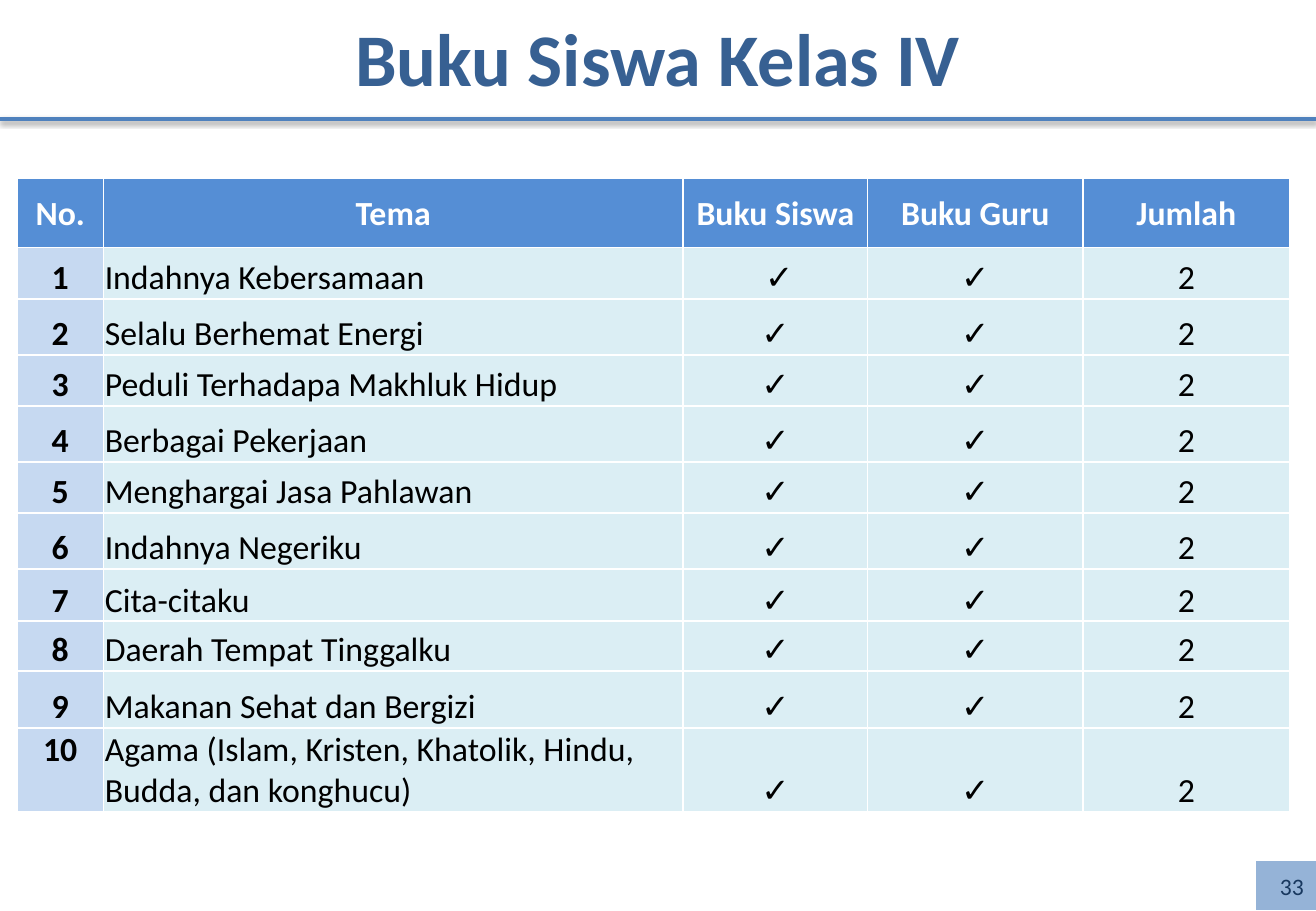
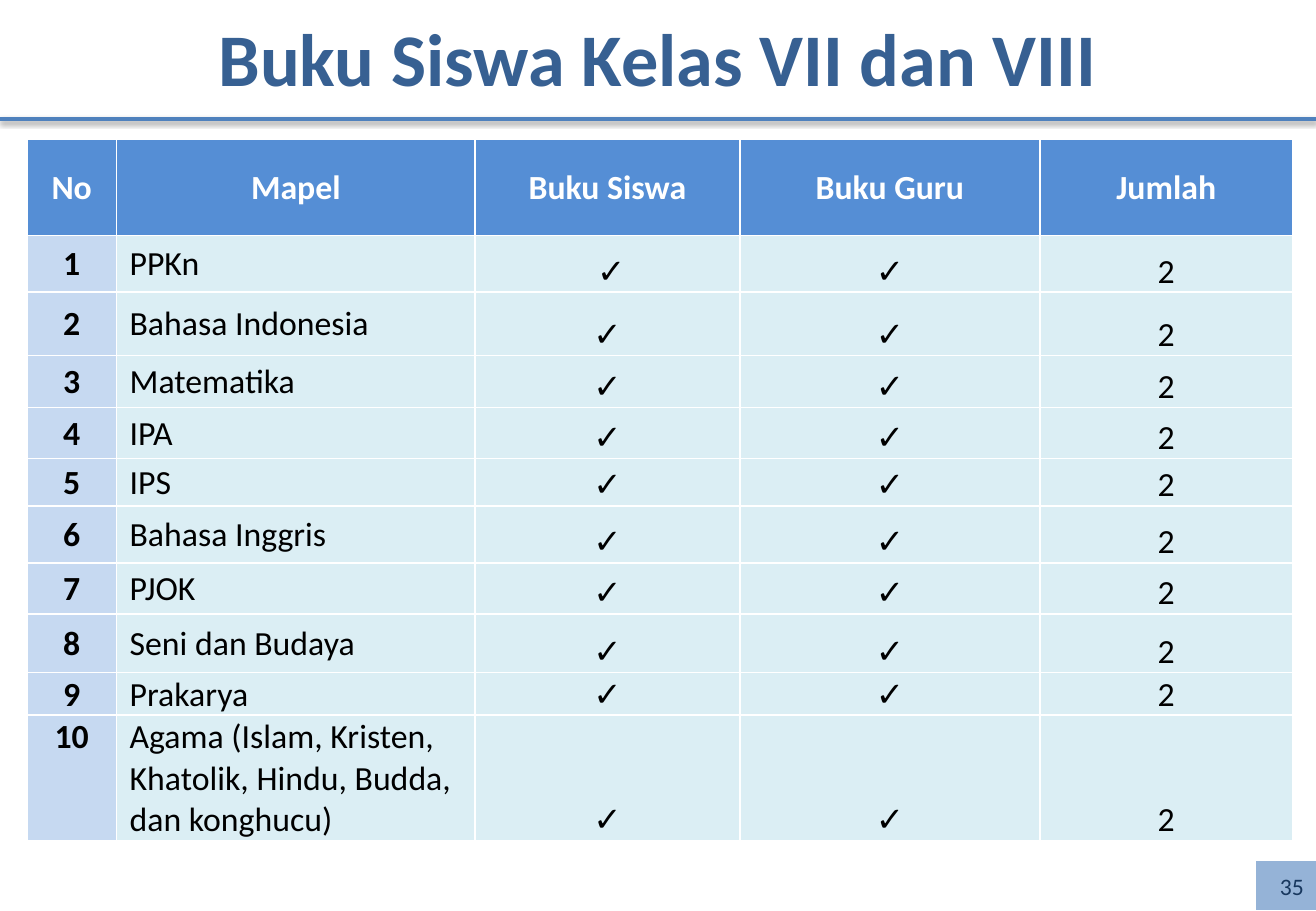
from dataclasses import dataclass

from lxml import etree
from pptx import Presentation
from pptx.dml.color import RGBColor
from pptx.enum import shapes, text
from pptx.oxml import parse_xml
from pptx.oxml.ns import nsdecls
from pptx.util import Cm, Pt

FONT = "Calibri"
WHITE = RGBColor(0xFF, 0xFF, 0xFF)
BLACK = RGBColor(0x00, 0x00, 0x00)
TITLE_BLUE = RGBColor(0x37, 0x60, 0x92)
RULE_BLUE = RGBColor(0x4F, 0x81, 0xBD)
PAGE_FILL = RGBColor(0x95, 0xB3, 0xD7)
PAGE_TEXT = RGBColor(0x17, 0x37, 0x5E)
HEADER_FILL = RGBColor(0x55, 0x8E, 0xD5)
NUMBER_FILL = RGBColor(0xC6, 0xD9, 0xF1)
BODY_FILL = RGBColor(0xDB, 0xEE, 0xF4)

SLIDE_WIDTH, SLIDE_HEIGHT = Cm(27.51), Cm(19.05)
TITLE_HEIGHT, RULE_TOP = Cm(2.36), Cm(2.49)
THIN_INSET = 0.03
CENTER, LEFT, RIGHT = text.PP_ALIGN.CENTER, text.PP_ALIGN.LEFT, text.PP_ALIGN.RIGHT
TOP, MIDDLE, BOTTOM = text.MSO_ANCHOR.TOP, text.MSO_ANCHOR.MIDDLE, text.MSO_ANCHOR.BOTTOM

RELIGION = "Agama (Islam, Kristen, Khatolik, Hindu, Budda, dan konghucu)"
RULE_SHADOW = (
    f'<a:effectLst {nsdecls("a")}><a:outerShdw blurRad="40000" dist="20000" dir="5400000" '
    'rotWithShape="0"><a:srgbClr val="000000"><a:alpha val="38000"/></a:srgbClr>'
    "</a:outerShdw></a:effectLst>"
)


@dataclass(frozen=True)
class BookSlide:
    title: str
    page: str
    left: float
    top: float
    columns: list[float]
    rows: list[float]
    headings: list[str]
    subjects: list[str]
    lead_inset: float
    lead_anchor: text.MSO_ANCHOR


BOOK_SLIDES = [
    BookSlide(
        "Buku Siswa Kelas IV", "33", 0.36, 3.73,
        [1.8, 12.12, 3.86, 4.5, 4.32],
        [1.45, 1.07, 1.17, 1.07, 1.17, 1.07, 1.17, 1.09, 1.04, 1.19, 1.73],
        ["No.", "Tema"],
        ["Indahnya Kebersamaan", "Selalu Berhemat Energi", "Peduli Terhadapa Makhluk Hidup",
         "Berbagai Pekerjaan", "Menghargai Jasa Pahlawan", "Indahnya Negeriku", "Cita-citaku",
         "Daerah Tempat Tinggalku", "Makanan Sehat dan Bergizi", RELIGION],
        THIN_INSET, BOTTOM,
    ),
    BookSlide(
        "Buku Siswa Kelas VII dan VIII", "35", 0.56, 2.92,
        [1.88, 7.49, 5.54, 6.27, 5.28],
        [2, 1.19, 1.32, 1.09, 1.07, 0.99, 1.19, 1.07, 1.22, 0.89, 2.6],
        ["No", "Mapel"],
        ["PPKn", "Bahasa Indonesia", "Matematika", "IPA", "IPS", "Bahasa Inggris", "PJOK",
         "Seni dan Budaya", "Prakarya", RELIGION],
        0.27, MIDDLE,
    ),
]


def write(frame, words: str, size: float, color: RGBColor, bold: bool, align) -> None:
    frame.text = words
    paragraph = frame.paragraphs[0]
    paragraph.alignment = align
    font = paragraph.runs[0].font
    font.name, font.size, font.bold = FONT, Pt(size), bold
    font.color.rgb = color


def add_frame(slide, book: BookSlide) -> None:
    rule = slide.shapes.add_connector(
        shapes.MSO_CONNECTOR.STRAIGHT, 0, RULE_TOP, SLIDE_WIDTH, RULE_TOP)
    rule.line.color.rgb = RULE_BLUE
    rule.line.width = Pt(2)
    rule._element.spPr.append(parse_xml(RULE_SHADOW))

    title = slide.shapes.title
    title.left, title.top, title.width, title.height = 0, 0, SLIDE_WIDTH, TITLE_HEIGHT
    write(title.text_frame, book.title, 44, TITLE_BLUE, True, CENTER)
    title.text_frame.vertical_anchor = MIDDLE
    title.text_frame.auto_size = text.MSO_AUTO_SIZE.NONE

    page = slide.shapes.add_shape(
        shapes.MSO_SHAPE.RECTANGLE, Cm(26.26), Cm(18.01), Cm(1.25), Cm(1.02))
    page.shadow.inherit = False
    page.fill.solid()
    page.fill.fore_color.rgb = PAGE_FILL
    page.line.fill.background()
    write(page.text_frame, book.page, 14, PAGE_TEXT, False, RIGHT)
    page.text_frame.vertical_anchor = MIDDLE


def add_borders(cell) -> None:
    properties = cell._tc.get_or_add_tcPr()
    for side in ("lnL", "lnR", "lnT", "lnB"):
        properties.append(etree.fromstring(
            f'<a:{side} {nsdecls("a")} w="{Pt(1)}"><a:solidFill>'
            f'<a:srgbClr val="{WHITE}"/></a:solidFill></a:{side}>'))


def format_cell(cell, words: str, row: int, column: int, book: BookSlide) -> None:
    add_borders(cell)
    is_header, is_lead = row == 0, column < 2
    is_number = column == 0 and not is_header
    cell.fill.solid()
    cell.fill.fore_color.rgb = (
        HEADER_FILL if is_header else NUMBER_FILL if is_number else BODY_FILL)
    cell.margin_left = cell.margin_right = Cm(book.lead_inset if is_lead else THIN_INSET)
    cell.margin_top, cell.margin_bottom = Cm(THIN_INSET), 0
    if is_header:
        cell.vertical_anchor = MIDDLE
    elif is_number and row == len(book.subjects):
        cell.vertical_anchor = TOP
    else:
        cell.vertical_anchor = book.lead_anchor if is_lead else BOTTOM
    align = LEFT if column == 1 and not is_header else CENTER
    write(cell.text_frame, words, 20, WHITE if is_header else BLACK,
          is_header or is_number, align)


def add_book_table(slide, book: BookSlide) -> None:
    content = [book.headings + ["Buku Siswa", "Buku Guru", "Jumlah"]]
    for number, subject in enumerate(book.subjects, 1):
        student_mark = " ✓" if number == 1 else "✓"
        content.append([str(number), subject, student_mark, "✓", "2"])

    table = slide.shapes.add_table(
        len(book.rows), len(book.columns), Cm(book.left), Cm(book.top),
        Cm(sum(book.columns)), Cm(sum(book.rows))).table
    table.horz_banding = False
    for column, width in zip(table.columns, book.columns):
        column.width = Cm(width)
    for row, height in zip(table.rows, book.rows):
        row.height = Cm(height)
    for row, entries in enumerate(content):
        for column, words in enumerate(entries):
            format_cell(table.cell(row, column), words, row, column, book)


def main() -> None:
    deck = Presentation()
    deck.slide_width, deck.slide_height = SLIDE_WIDTH, SLIDE_HEIGHT
    for book in BOOK_SLIDES:
        slide = deck.slides.add_slide(deck.slide_layouts.get_by_name("Title Only"))
        add_frame(slide, book)
        add_book_table(slide, book)
    deck.save("out.pptx")


if __name__ == "__main__":
    main()
